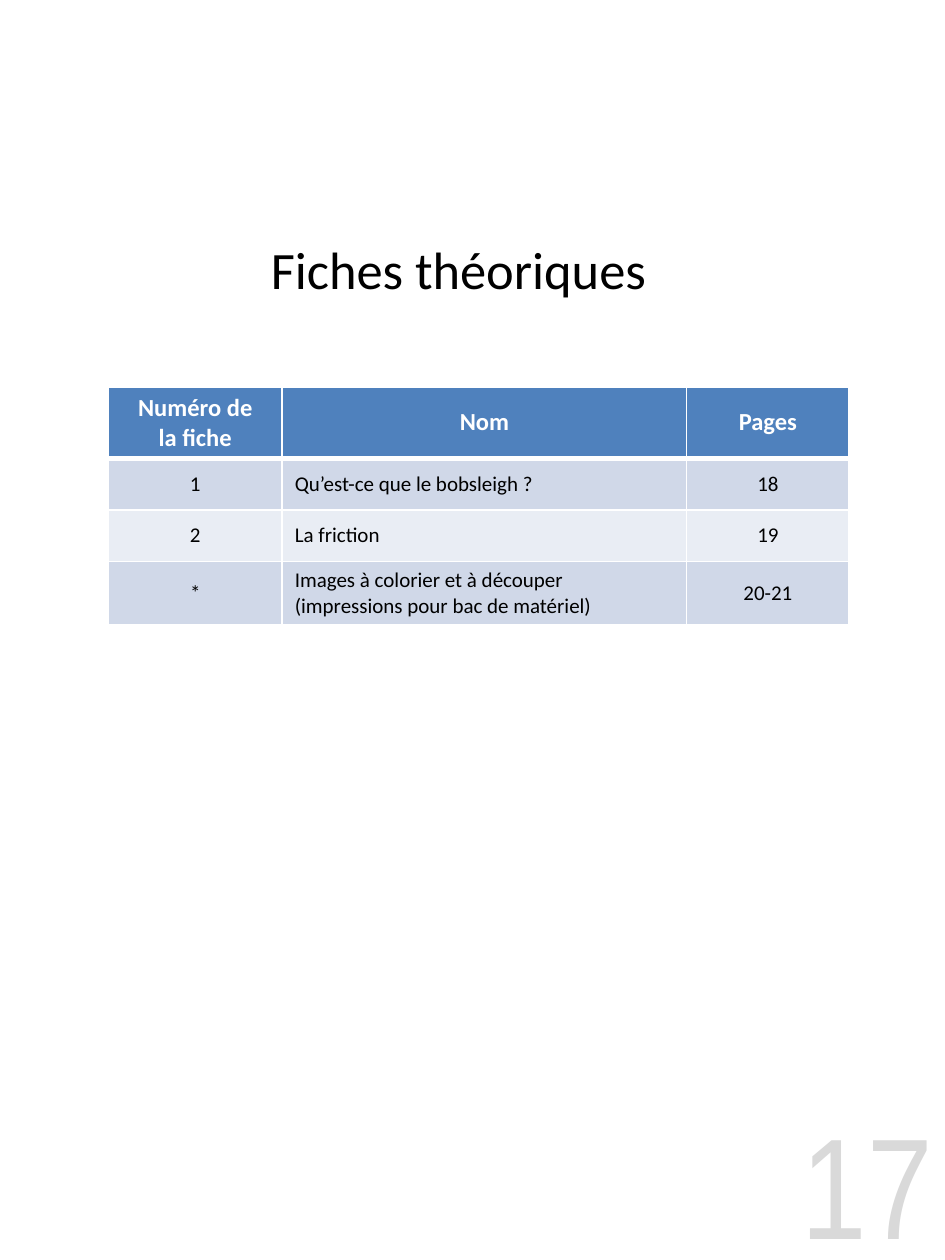
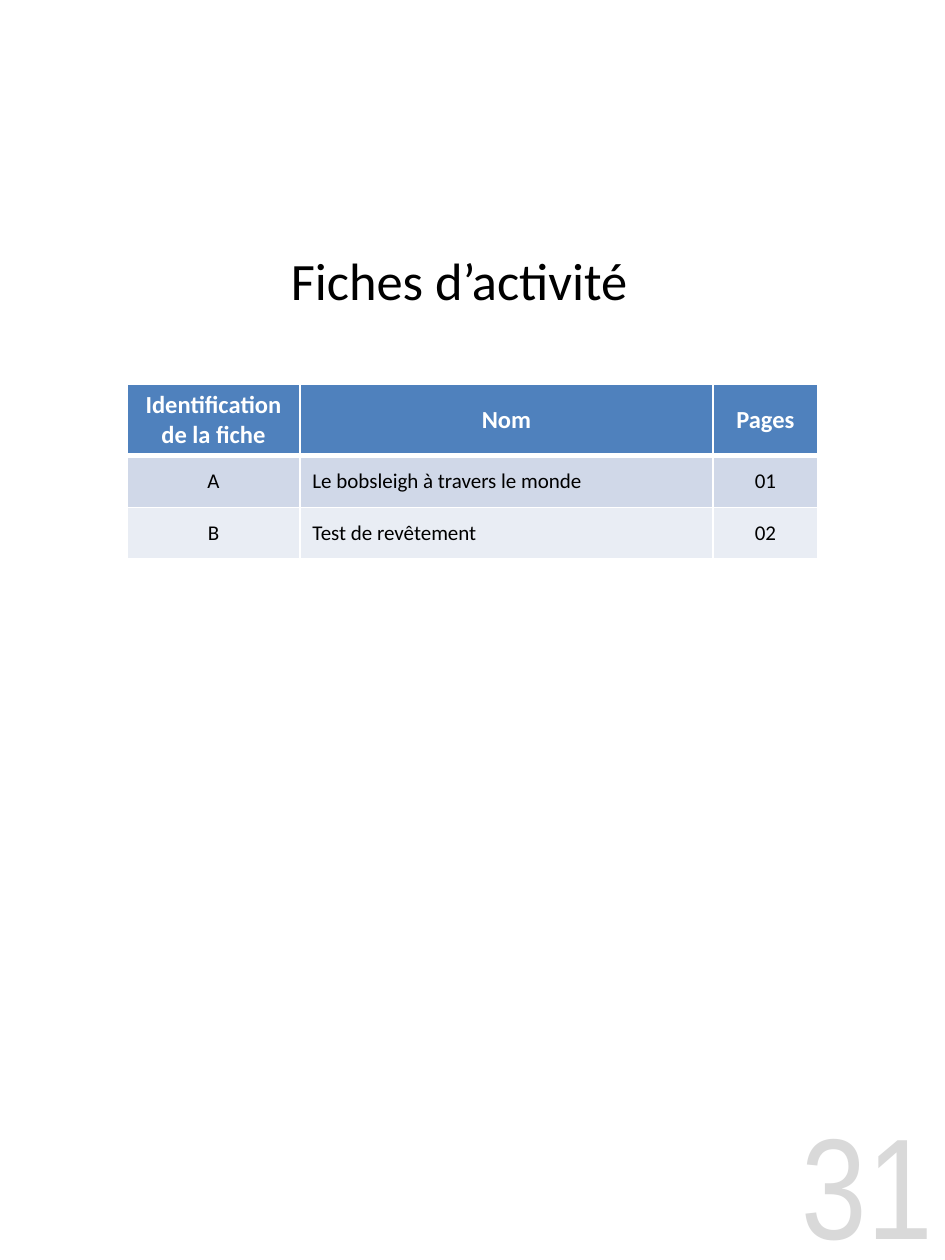
from pptx import Presentation
from pptx.dml.color import RGBColor
from pptx.enum.text import MSO_ANCHOR as Anchor, PP_ALIGN as Align
from pptx.oxml import parse_xml
from pptx.oxml.ns import nsdecls
from pptx.util import Inches, Pt

WHITE = RGBColor(0xFF, 0xFF, 0xFF)
BLACK = RGBColor(0, 0, 0)
GREY = RGBColor(0xD9, 0xD9, 0xD9)
BLUE = RGBColor(0x4F, 0x81, 0xBD)
BANDS = [RGBColor(0xE9, 0xED, 0xF4), RGBColor(0xD0, 0xD8, 0xE8)]

TITLE = {"name": "Calibri", "size": Pt(30), "color": BLACK}
FOLIO = {"name": "Arial Narrow", "size": Pt(82), "color": GREY}
HEAD = {"name": "Calibri", "size": Pt(14), "bold": True, "color": WHITE}
BODY = {"name": "Calibri", "size": Pt(12), "bold": False, "color": BLACK}

HEAD_HIGH = 0.56
ROW_HIGH = 0.41
TALL_HIGH = 0.5
WRAP_LEN = 40

PAGES = [
    {
        "folio": "17",
        "title": ("Fiches théoriques", (1.06, 1.66, 5.16, 0.95), Align.CENTER, Anchor.MIDDLE),
        "spot": (0.86, 3.07),
        "cols": [1.38, 3.21, 1.29],
        "rows": [
            ("Numéro de\nla fiche", "Nom", "Pages"),
            ("1", "Qu’est-ce que le bobsleigh ?", "18"),
            ("2", "La friction", "19"),
            ("*", "Images à colorier et à découper (impressions pour bac de matériel)", "20-21"),
        ],
    },
    {
        "folio": "31",
        "title": ("Fiches d’activité", (2.21, 1.92, 3, 0.61), Align.LEFT, Anchor.TOP),
        "spot": (1.01, 3.05),
        "cols": [1.37, 3.28, 0.83],
        "rows": [
            ("Identification\nde la fiche", "Nom", "Pages"),
            ("A", "Le bobsleigh à travers le monde", "01"),
            ("B", "Test de revêtement", "02"),
        ],
    },
]


def write(frame, text, look, align):
    frame.word_wrap = True
    frame.text = text
    for para in frame.paragraphs:
        para.alignment = align
        for key, value in look.items():
            if key == "color":
                para.runs[0].font.color.rgb = value
            else:
                setattr(para.runs[0].font, key, value)


def add_text(slide, text, box, look, align, anchor):
    shape = slide.shapes.add_textbox(*map(Inches, box))
    write(shape.text_frame, text, look, align)
    shape.text_frame.vertical_anchor = anchor


def add_edges(cell, sizes):
    props = cell._tc.get_or_add_tcPr()
    for spot, (side, size) in enumerate(sizes.items()):
        props.insert(spot, parse_xml(
            f'<a:ln{side} {nsdecls("a")} w="{Pt(size)}"><a:solidFill>'
            f'<a:srgbClr val="{WHITE}"/></a:solidFill></a:ln{side}>'))


def add_grid(slide, spot, cols, rows):
    highs = [HEAD_HIGH] + [
        TALL_HIGH if len(row[1]) > WRAP_LEN else ROW_HIGH for row in rows[1:]]
    box = (*spot, sum(cols), sum(highs))
    table = slide.shapes.add_table(len(rows), len(cols), *map(Inches, box)).table
    for col, wide in zip(table.columns, cols):
        col.width = Inches(wide)
    for r, (row, high) in enumerate(zip(rows, highs)):
        table.rows[r].height = Inches(high)
        for c, text in enumerate(row):
            cell = table.cell(r, c)
            cell.fill.solid()
            cell.fill.fore_color.rgb = BANDS[r % 2] if r else BLUE
            cell.vertical_anchor = Anchor.MIDDLE
            align = Align.LEFT if r and c == 1 else Align.CENTER
            write(cell.text_frame, text, BODY if r else HEAD, align)
            add_edges(cell, {"L": 1, "R": 1, "T": 3 if r == 1 else 1, "B": 1 if r else 3})


def add_page(deck, page):
    slide = deck.slides.add_slide(deck.slide_layouts[6])
    add_text(slide, page["folio"], (5.79, 8.76, 1.71, 1.24), FOLIO, Align.RIGHT, Anchor.MIDDLE)
    text, box, align, anchor = page["title"]
    add_text(slide, text, box, TITLE, align, anchor)
    add_grid(slide, page["spot"], page["cols"], page["rows"])


def main():
    deck = Presentation()
    deck.slide_width, deck.slide_height = Inches(7.5), Inches(10)
    for page in PAGES:
        add_page(deck, page)
    deck.save("out.pptx")


if __name__ == "__main__":
    main()
